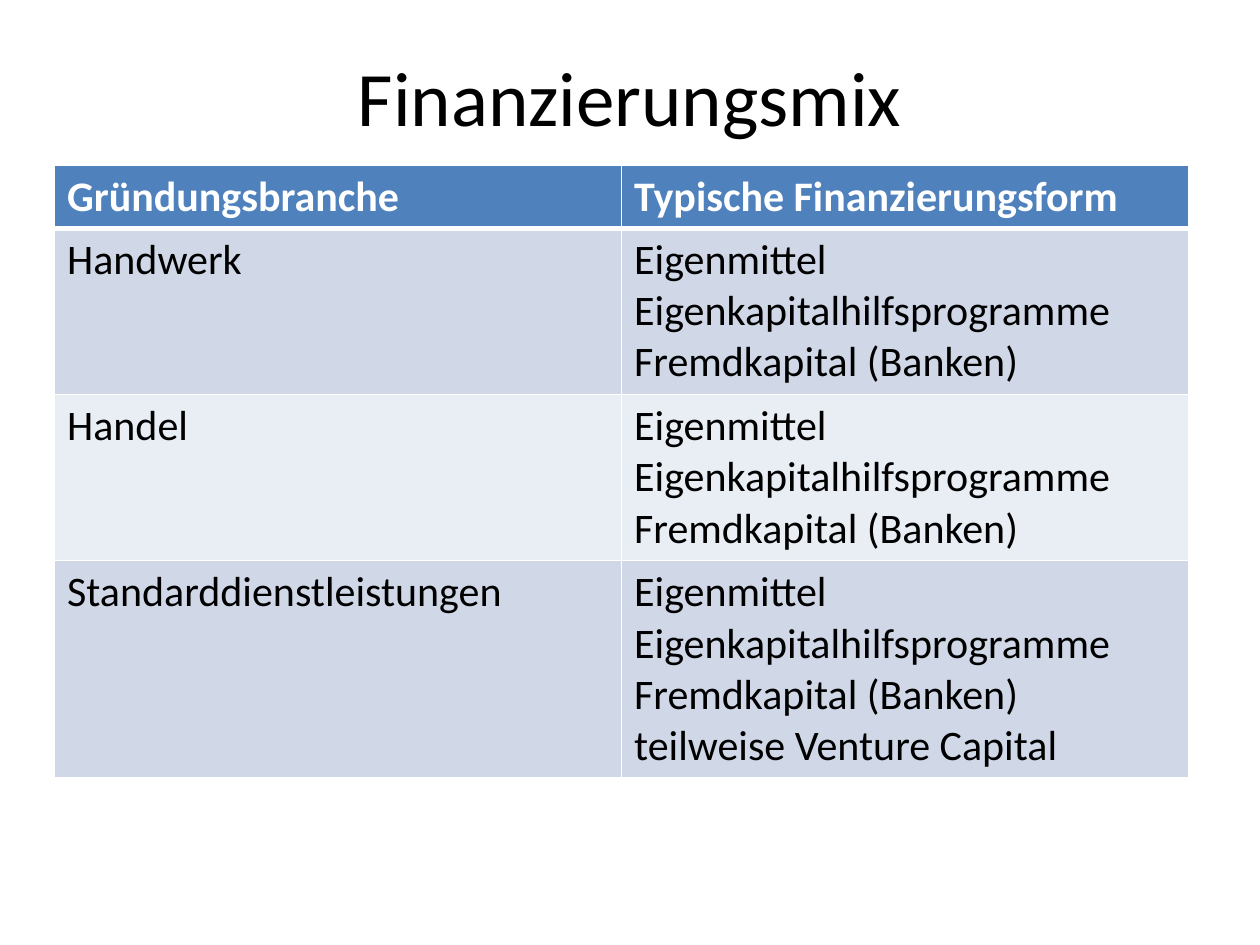
from dataclasses import dataclass

from lxml import etree
from pptx import Presentation
from pptx.dml.color import RGBColor
from pptx.enum import text
from pptx.oxml import ns
from pptx.util import Cm, Pt

FONT = "Calibri"
BLACK, WHITE = "000000", "FFFFFF"
HEADER_FILL = "4F81BD"
BAND_FILLS = ("D0D8E8", "E9EDF4")
COMMON_FORMS = ("Eigenmittel", "Eigenkapitalhilfsprogramme", "Fremdkapital (Banken)")


@dataclass
class TableRow:
    branch: str
    forms: tuple[str, ...]
    height: float  # cm
    fill: str
    is_header: bool = False


ROWS = [
    TableRow("Gründungsbranche", ("Typische Finanzierungsform",), 1.25, HEADER_FILL, True),
    TableRow("Handwerk", COMMON_FORMS, 3.35, BAND_FILLS[0]),
    TableRow("Handel", COMMON_FORMS, 3.35, BAND_FILLS[1]),
    TableRow("Standarddienstleistungen", COMMON_FORMS + ("teilweise Venture Capital",),
             4.38, BAND_FILLS[0]),
]


def color(value: str) -> RGBColor:
    return RGBColor.from_string(value)


def write_lines(frame, lines: tuple[str, ...], size: int, ink: str,
                bold: bool = False, align=text.PP_ALIGN.LEFT) -> None:
    for index, line in enumerate(lines):
        para = frame.add_paragraph() if index else frame.paragraphs[0]
        para.alignment = align
        span = para.add_run()
        span.text = line
        span.font.name = FONT
        span.font.size = Pt(size)
        span.font.bold = bold
        span.font.color.rgb = color(ink)


def set_borders(cell, top: int, bottom: int) -> None:
    """Draw white cell borders; widths are in points."""
    properties = cell._tc.get_or_add_tcPr()
    widths = {"a:lnL": 1, "a:lnR": 1, "a:lnT": top, "a:lnB": bottom}
    for index, (tag, width) in enumerate(widths.items()):
        line = etree.Element(ns.qn(tag), w=str(Pt(width)))
        fill = etree.SubElement(line, ns.qn("a:solidFill"))
        etree.SubElement(fill, ns.qn("a:srgbClr"), val=WHITE)
        properties.insert(index, line)


def add_title(page, title: str) -> None:
    box = page.shapes.add_textbox(Cm(1.27), Cm(0.76), Cm(22.86), Cm(2.36))
    frame = box.text_frame
    frame.word_wrap = True
    frame.vertical_anchor = text.MSO_ANCHOR.MIDDLE
    write_lines(frame, (title,), 44, BLACK, align=text.PP_ALIGN.CENTER)


def add_financing_table(page, rows: list[TableRow]) -> None:
    height = Cm(sum(row.height for row in rows))
    table = page.shapes.add_table(len(rows), 2, Cm(1.1), Cm(3.33), Cm(22.86), height).table
    for index, row in enumerate(rows):
        table.rows[index].height = Cm(row.height)
        below_header = index > 0 and rows[index - 1].is_header
        for column, lines in enumerate(((row.branch,), row.forms)):
            cell = table.cell(index, column)
            cell.fill.solid()
            cell.fill.fore_color.rgb = color(row.fill)
            set_borders(cell, 3 if below_header else 1, 3 if row.is_header else 1)
            write_lines(cell.text_frame, lines, 24,
                        WHITE if row.is_header else BLACK, bold=row.is_header)


def main() -> None:
    deck = Presentation()
    deck.slide_width, deck.slide_height = Cm(25.4), Cm(19.05)
    page = deck.slides.add_slide(deck.slide_layouts[6])
    # Heading
    add_title(page, "Finanzierungsmix")
    # Financing forms by industry
    add_financing_table(page, ROWS)
    deck.save("out.pptx")


if __name__ == "__main__":
    main()
